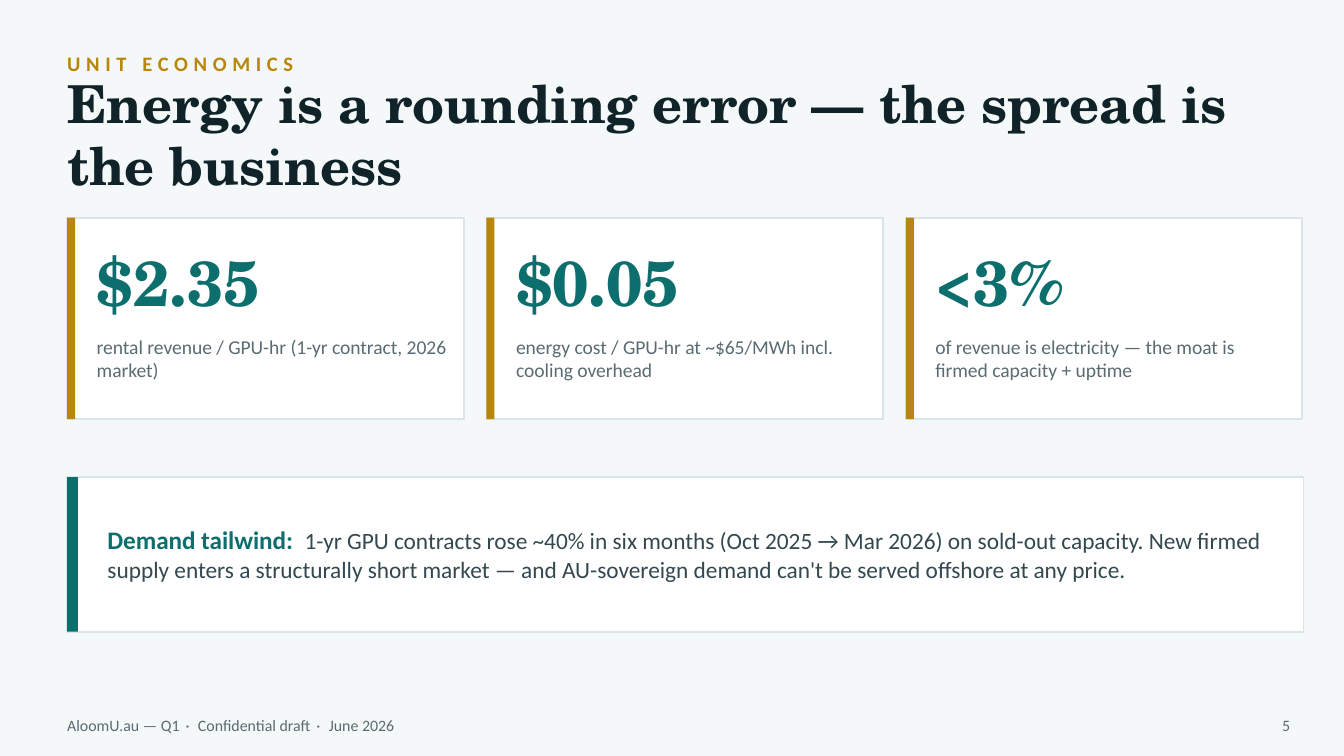
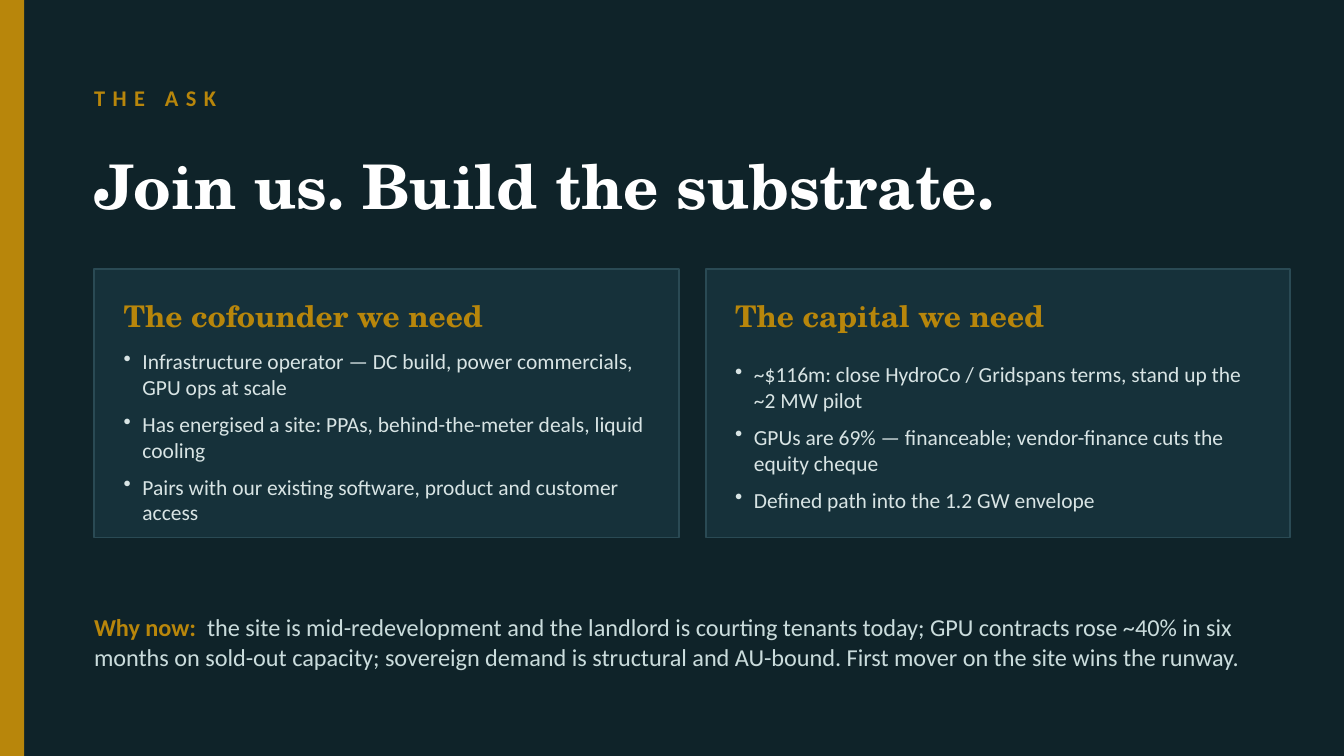
from dataclasses import dataclass, replace
from typing import NamedTuple

from lxml.etree import SubElement
from pptx import Presentation
from pptx.dml.color import RGBColor
from pptx.enum.shapes import MSO_SHAPE
from pptx.enum.text import MSO_ANCHOR, MSO_AUTO_SIZE, PP_ALIGN
from pptx.oxml.ns import qn
from pptx.slide import Slide
from pptx.util import Pt


class Box(NamedTuple):
    """A place on the slide, in points."""
    x: float
    y: float
    w: float
    h: float

    def inner(self, dx: float, dy: float, w: float, h: float) -> "Box":
        return Box(self.x + dx, self.y + dy, w, h)


@dataclass(frozen=True)
class Style:
    size: float
    color: str
    font: str = "Calibri"
    bold: bool = False
    track: float = 0


@dataclass(frozen=True)
class Theme:
    pale: str = "F4F8F8"
    ink: str = "0F2329"
    gold: str = "B8860B"
    teal: str = "0D6E6E"
    white: str = "FFFFFF"
    rule: str = "DBE4E7"
    slate: str = "5A6B72"
    text: str = "33484F"
    panel: str = "16313A"
    edge: str = "2A4A54"
    mist: str = "D8E4E4"
    haze: str = "CADCDC"
    serif: str = "TeX Gyre Schola"

    def label(self, size: float, track: float) -> Style:
        return Style(size, self.gold, bold=True, track=track)

    def head(self, size: float, color: str) -> Style:
        return Style(size, color, self.serif, True)

    def lead(self, size: float, color: str) -> Style:
        return Style(size, color, bold=True)

    def body(self, size: float, color: str) -> Style:
        return Style(size, color)


class Span(NamedTuple):
    text: str
    style: Style


class Stat(NamedTuple):
    value: str
    note: str


class Need(NamedTuple):
    head: str
    items: list[str]


THEME = Theme()
WIDE, HIGH = 720, 405

STATS = [
    Stat("$2.35", "rental revenue / GPU-hr (1-yr contract, 2026 market)"),
    Stat("$0.05", "energy cost / GPU-hr at ~$65/MWh incl. cooling overhead"),
    Stat("<3%", "of revenue is electricity — the moat is firmed capacity + uptime"),
]
NEEDS = [
    Need("The cofounder we need", [
        "Infrastructure operator — DC build, power commercials, GPU ops at scale",
        "Has energised a site: PPAs, behind-the-meter deals, liquid cooling",
        "Pairs with our existing software, product and customer access",
    ]),
    Need("The capital we need", [
        "~$116m: close HydroCo / Gridspans terms, stand up the ~2 MW pilot",
        "GPUs are 69% — financeable; vendor-finance cuts the equity cheque",
        "Defined path into the 1.2 GW envelope",
    ]),
]
FOOT = ["AloomU.au — Q1", "Confidential draft", "June 2026"]
TREND = (
    "1-yr GPU contracts rose ~40% in six months (Oct 2025 → Mar 2026) on "
    "sold-out capacity. New firmed supply enters a structurally short market — "
    "and AU-sovereign demand can't be served offshore at any price."
)
TIMING = (
    "the site is mid-redevelopment and the landlord is courting tenants today; "
    "GPU contracts rose ~40% in six months on sold-out capacity; sovereign "
    "demand is structural and AU-bound. First mover on the site wins the runway."
)


def place(shape, box: Box) -> None:
    shape.left, shape.top, shape.width, shape.height = map(Pt, box)


def write(slide: Slide, box: Box, paras: list[list[Span]], *, title: bool = False,
          anchor=MSO_ANCHOR.MIDDLE, align=PP_ALIGN.LEFT,
          bullet: bool = False, after: float = 0) -> None:
    """Set paragraphs of spans in the title or in a new text box."""
    shape = slide.shapes.title if title else slide.shapes.add_textbox(0, 0, 0, 0)
    place(shape, box)
    frame = shape.text_frame
    frame.word_wrap = True
    frame.auto_size = MSO_AUTO_SIZE.NONE
    frame.vertical_anchor = anchor
    frame.margin_left = frame.margin_right = 0
    frame.margin_top = frame.margin_bottom = 0
    for i, spans in enumerate(paras):
        para = frame.add_paragraph() if i else frame.paragraphs[0]
        if bullet:
            dent(para)
        para.alignment = align
        if after:
            para.space_after = Pt(after)
        for text, style in spans:
            run = para.add_run()
            run.text = text
            font = run.font
            font.name, font.size, font.bold = style.font, Pt(style.size), style.bold
            font.color.rgb = RGBColor.from_string(style.color)
            if style.track:
                font._element.set("spc", str(round(style.track * 100)))


def dent(para) -> None:
    """Give a paragraph a hanging bullet."""
    props = para._p.get_or_add_pPr()
    props.set("marL", str(Pt(10.08)))
    props.set("indent", str(-Pt(10.08)))
    SubElement(props, qn("a:buChar")).set("char", "•")


def rect(slide: Slide, box: Box, fill: str, line: str = "") -> None:
    shape = slide.shapes.add_shape(MSO_SHAPE.RECTANGLE, *map(Pt, box))
    shape.shadow.inherit = False
    shape.fill.solid()
    shape.fill.fore_color.rgb = RGBColor.from_string(fill)
    if line:
        shape.line.color.rgb = RGBColor.from_string(line)
        shape.line.width = Pt(1)
    else:
        shape.line.fill.background()


def tile(slide: Slide, box: Box, accent: str, thick: float) -> None:
    """Draw a white card with a coloured left edge."""
    rect(slide, box, THEME.white, THEME.rule)
    rect(slide, box._replace(w=thick), accent)


def start(deck, ground: str) -> Slide:
    slide = deck.slides.add_slide(deck.slide_layouts.get_by_name("Title Only"))
    slide.background.fill.solid()
    slide.background.fill.fore_color.rgb = RGBColor.from_string(ground)
    return slide


def remark(slide: Slide, box: Box, lead: Span, body: Span) -> None:
    """Write a bold lead, a wide gap and a sentence."""
    gap = Span(" ", replace(lead.style, track=lead.style.size * 0.23))
    write(slide, box, [[lead, gap, body]])


def footer(slide: Slide, page: int) -> None:
    style = THEME.body(8.5, THEME.slate)
    dot = Span(" · ", replace(style, track=1.25))
    spans = [Span(FOOT[0], style)]
    for part in FOOT[1:]:
        spans += [dot, Span(part, style)]
    write(slide, Box(36, 379.44, 432, 18), [spans])
    write(slide, Box(669.6, 379.44, 21.6, 18), [[Span(str(page), style)]],
          align=PP_ALIGN.RIGHT)


def costs(deck) -> None:
    slide = start(deck, THEME.pale)
    write(slide, Box(36, 23.04, 648, 21.6),
          [[Span("UNIT ECONOMICS", THEME.label(11, 3))]])
    write(slide, Box(36, 44.64, 648, 54), [[Span(
        "Energy is a rounding error — the spread is the business",
        THEME.head(28, THEME.ink))]], title=True)
    for i, stat in enumerate(STATS):
        card = Box(36 + i * 224.64, 116.64, 212.4, 108)
        tile(slide, card, THEME.gold, 4.32)
        write(slide, card.inner(15.84, 5.76, 189.36, 56.16),
              [[Span(stat.value, THEME.head(34, THEME.teal))]])
        write(slide, card.inner(15.84, 62.64, 189.36, 41.04),
              [[Span(stat.note, THEME.body(10.5, THEME.slate))]],
              anchor=MSO_ANCHOR.TOP)
    band = Box(36, 255.6, 662.4, 82.8)
    tile(slide, band, THEME.teal, 5.76)
    remark(slide, band.inner(21.6, 5.04, 626.4, 72),
           Span("Demand tailwind:", THEME.lead(13.5, THEME.teal)),
           Span(TREND, THEME.body(12.5, THEME.text)))
    footer(slide, 5)


def ask(deck) -> None:
    slide = start(deck, THEME.ink)
    rect(slide, Box(0, 0, 12.96, HIGH), THEME.gold)
    write(slide, Box(50.4, 39.6, 619.2, 25.2),
          [[Span("THE ASK", THEME.label(12, 4))]])
    write(slide, Box(50.4, 68.4, 633.6, 61.2), [[Span(
        "Join us. Build the substrate.", THEME.head(33, THEME.white))]], title=True)
    for i, need in enumerate(NEEDS):
        panel = Box(50.4 + i * 327.6, 144, 313.2, 144)
        rect(slide, panel, THEME.panel, THEME.edge)
        write(slide, panel.inner(15.84, 10.8, 280.8, 28.8),
              [[Span(need.head, THEME.head(16, THEME.gold))]])
        item = THEME.body(11.5, THEME.mist)
        write(slide, panel.inner(15.84, 43.2, 280.8, 93.6),
              [[Span(text, item)] for text in need.items], bullet=True, after=6)
    remark(slide, Box(50.4, 313.2, 640.8, 61.2),
           Span("Why now:", THEME.lead(13, THEME.gold)),
           Span(TIMING, THEME.body(13, THEME.haze)))


def main() -> None:
    deck = Presentation()
    deck.slide_width, deck.slide_height = Pt(WIDE), Pt(HIGH)
    costs(deck)
    ask(deck)
    deck.save("out.pptx")


if __name__ == "__main__":
    main()
